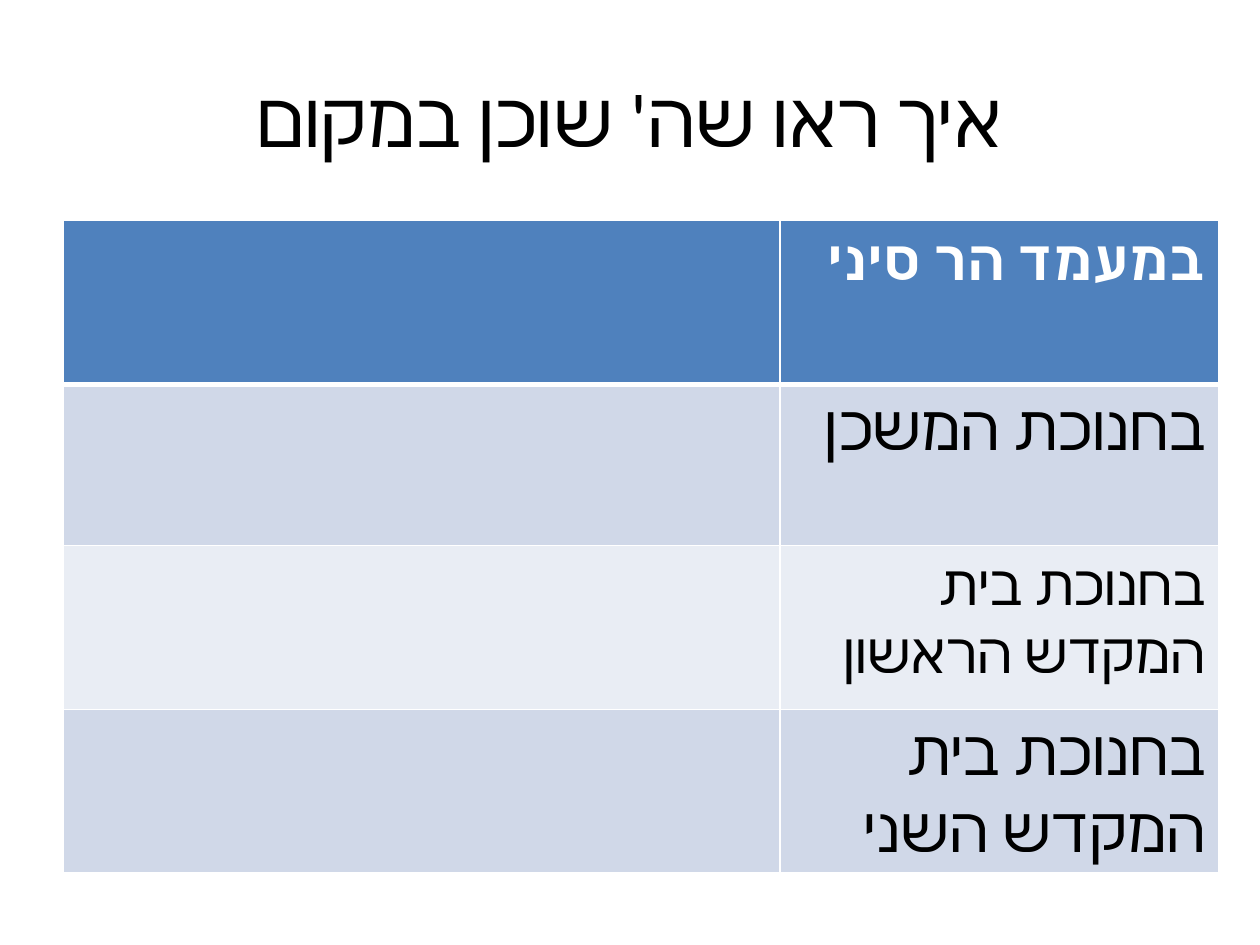
from lxml.etree import SubElement
from pptx import Presentation
from pptx.dml.color import RGBColor
from pptx.enum.text import MSO_ANCHOR, PP_ALIGN
from pptx.oxml.ns import qn
from pptx.util import Inches, Pt

BLACK = RGBColor(0x00, 0x00, 0x00)
WHITE = RGBColor(0xFF, 0xFF, 0xFF)
HEADER_BLUE = RGBColor(0x4F, 0x81, 0xBD)
BAND_DARK = RGBColor(0xD0, 0xD8, 0xE8)
BAND_LIGHT = RGBColor(0xE9, 0xED, 0xF4)
FONT = "Calibri"


def write_hebrew(frame, text, size, color, align, bold=False):
    frame.text = text
    paragraph = frame.paragraphs[0]
    paragraph.alignment = align
    paragraph._p.get_or_add_pPr().set("rtl", "1")
    font = paragraph.runs[0].font
    font.name, font.size, font.bold = FONT, Pt(size), bold
    font.color.rgb = color
    SubElement(font._element, qn("a:cs"), typeface=FONT)


def add_borders(cell, widths):
    properties = cell._tc.get_or_add_tcPr()
    for position, (side, width) in enumerate(widths.items()):
        line = properties.makeelement(qn(f"a:{side}"), {"w": str(Pt(width))})
        fill = SubElement(line, qn("a:solidFill"))
        SubElement(fill, qn("a:srgbClr"), val=str(WHITE))
        properties.insert(position, line)


prs = Presentation()
prs.slide_width, prs.slide_height = Inches(10), Inches(7.5)
slide = prs.slides.add_slide(prs.slide_layouts[6])

title = slide.shapes.add_textbox(Inches(0.5), Inches(0.3), Inches(9), Inches(1.25)).text_frame
title.word_wrap = True
title.vertical_anchor = MSO_ANCHOR.MIDDLE
write_hebrew(title, "איך ראו שה' שוכן במקום", 44, BLACK, PP_ALIGN.CENTER)

events = [
    ("במעמד הר סיני", 32, WHITE, HEADER_BLUE, 1.3),
    ("בחנוכת המשכן", 36, BLACK, BAND_DARK, 1.28),
    ("בחנוכת בית המקדש הראשון", 32, BLACK, BAND_LIGHT, 1.3),
    ("בחנוכת בית המקדש השני", 36, BLACK, BAND_DARK, 1.3),
]
table = slide.shapes.add_table(
    len(events), 2, Inches(0.5), Inches(1.75), Inches(9.17), Inches(5.17)
).table
table.columns[0].width = Inches(5.69)
table.columns[1].width = Inches(3.48)

for row, (event, size, color, background, height) in enumerate(events):
    table.rows[row].height = Inches(height)
    write_hebrew(table.cell(row, 1).text_frame, event, size, color, PP_ALIGN.RIGHT, bold=row == 0)
    top, bottom = (3 if row == 1 else 1), (3 if row == 0 else 1)
    for cell in table.rows[row].cells:
        cell.fill.solid()
        cell.fill.fore_color.rgb = background
        add_borders(cell, {"lnL": 1, "lnR": 1, "lnT": top, "lnB": bottom})

prs.save("out.pptx")
